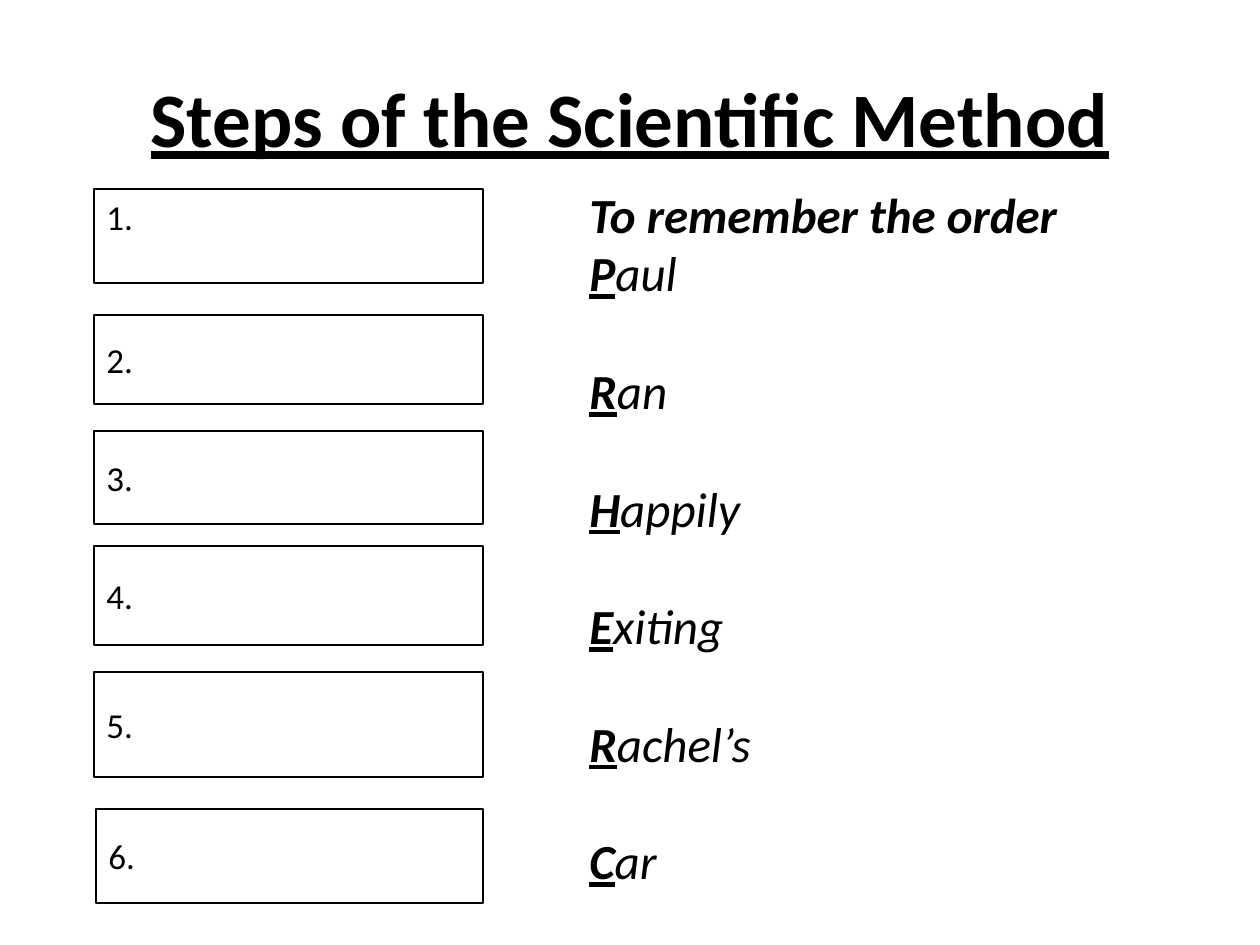
import pptx
import pptx.util
import pptx.dml.color
import pptx.enum.shapes
import pptx.enum.text

PX = 914400 / 126
COLORS = {"ink": "000000", "paper": "FFFFFF"}
FONT = "Calibri"
ANCHOR = pptx.enum.text.MSO_ANCHOR
ALIGN = pptx.enum.text.PP_ALIGN
BOXES = [
    (94, 189, 389, 94),
    (94, 315, 389, 89),
    (94, 431, 389, 93),
    (94, 546, 389, 99),
    (94, 672, 389, 105),
    (96, 809, 387, 94),
]
WORDS = ["Paul", "Ran", "Happily", "Exiting", "Rachel’s", "Car"]
LINE_PITCH = 33.6


def px(*lengths):
    return [pptx.util.Emu(round(n * PX)) for n in lengths]


def color(name):
    return pptx.dml.color.RGBColor.from_string(COLORS[name])


def style(p, size, **flags):
    p.font.name = FONT
    p.font.size = pptx.util.Pt(size)
    p.font.color.rgb = color("ink")
    for flag, value in flags.items():
        setattr(p.font, flag, value)


def add_text_box(slide, box, anchor):
    tf = slide.shapes.add_textbox(*px(*box)).text_frame
    tf.word_wrap = True
    tf.vertical_anchor = anchor
    return tf


def add_title(slide, text):
    p = add_text_box(slide, (63, 38, 1134, 157), ANCHOR.MIDDLE).paragraphs[0]
    p.text = text
    p.alignment = ALIGN.CENTER
    style(p, 44, bold=True, underline=True)


def add_step_box(slide, box, label, anchor):
    sp = slide.shapes.add_shape(pptx.enum.shapes.MSO_SHAPE.RECTANGLE, *px(*box))
    sp.shadow.inherit = False
    sp.fill.solid()
    sp.fill.fore_color.rgb = color("paper")
    sp.line.color.rgb = color("ink")
    sp.line.width = pptx.util.Pt(0.75)
    tf = sp.text_frame
    tf.word_wrap = True
    tf.vertical_anchor = anchor
    p = tf.paragraphs[0]
    p.text = label
    p.alignment = ALIGN.LEFT
    style(p, 20)


def add_mnemonic(slide, heading, words):
    tf = add_text_box(slide, (577, 178, 567, 726), ANCHOR.TOP)
    p = tf.paragraphs[0]
    p.text = heading
    style(p, 28, bold=True, italic=True)
    p.line_spacing = pptx.util.Pt(LINE_PITCH)
    for i, word in enumerate(words):
        p = tf.add_paragraph()
        style(p, 28, italic=True)
        p.line_spacing = pptx.util.Pt(LINE_PITCH)
        p.space_before = pptx.util.Pt(LINE_PITCH if i else 0)
        r = p.add_run()
        r.text = word[0]
        r.font.bold = True
        r.font.underline = True
        p.add_run().text = word[1:]


def main():
    prs = pptx.Presentation()
    prs.slide_width, prs.slide_height = px(1260, 945)
    slide = prs.slides.add_slide(prs.slide_layouts[6])
    add_title(slide, "Steps of the Scientific Method")
    for number, box in enumerate(BOXES, 1):
        anchor = ANCHOR.TOP if number == 1 else ANCHOR.MIDDLE
        add_step_box(slide, box, f"{number}.", anchor)
    add_mnemonic(slide, "To remember the order", WORDS)
    prs.save("out.pptx")


if __name__ == "__main__":
    main()
